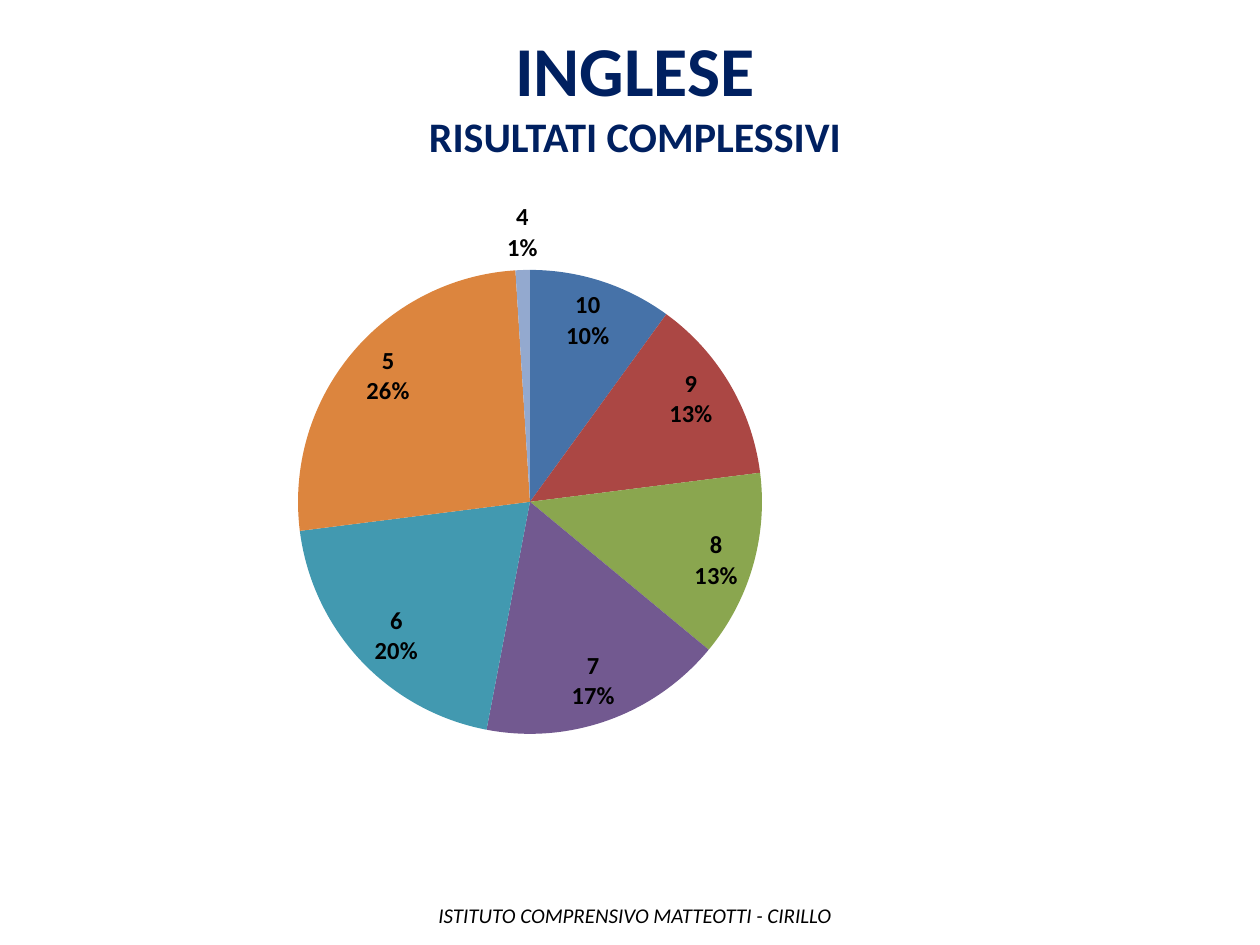
from lxml import etree
from pptx import Presentation
from pptx.chart.data import CategoryChartData
from pptx.dml.color import RGBColor
from pptx.enum.chart import XL_CHART_TYPE, XL_LABEL_POSITION
from pptx.enum.text import PP_ALIGN
from pptx.oxml.ns import qn
from pptx.util import Pt

PIE = XL_CHART_TYPE.PIE
BEST_FIT = XL_LABEL_POSITION.BEST_FIT
LEFT, CENTER = PP_ALIGN.LEFT, PP_ALIGN.CENTER

# Content
TITLE = [("INGLESE", 40), ("RISULTATI COMPLESSIVI", 24)]
FOOTER = [("ISTITUTO COMPRENSIVO MATTEOTTI - CIRILLO", 12)]
GRADES = [  # grade, percent, slice colour
    ("10", 10, "blue"),
    ("9", 13, "red"),
    ("8", 13, "green"),
    ("7", 17, "purple"),
    ("6", 20, "teal"),
    ("5", 26, "orange"),
    ("4", 1, "pale"),
]
COLORS = {
    "navy": "002060", "black": "000000",
    "blue": "4672A8", "red": "AB4744", "green": "8AA64F", "purple": "725990",
    "teal": "4299B0", "orange": "DC853E", "pale": "93A9CF",
}
FONT = "Calibri"

# Geometry in px: left, top, width, height
PX = 914400 // 126
SLIDE = (1260, 945)
TITLE_BOX = (174, 20, 922, 149)
FOOTER_BOX = (426, 896, 430, 38)
CHART_BOX = (54, 185, 995, 568)
PIE_BOX = (298, 270, 464, 464)


def emu(box):
    return [v * PX for v in box]


def rgb(name):
    return RGBColor.from_string(COLORS[name])


def set_font(font, size, color, bold=False, italic=False):
    font.name, font.size = FONT, Pt(size)
    font.bold, font.italic = bold, italic
    font.color.rgb = rgb(color)


def add_text(s, lines, box, color, align=LEFT, wrap=True, **style):
    tf = s.shapes.add_textbox(*emu(box)).text_frame
    tf.word_wrap = wrap
    for i, (text, size) in enumerate(lines):
        p = tf.add_paragraph() if i else tf.paragraphs[0]
        p.alignment = align
        r = p.add_run()
        r.text = text
        set_font(r.font, size, color, **style)


def place_plot(chart, box, frame):
    """Fix the inner plot area at box, as fractions of the chart frame."""
    area = chart._chartSpace.chart.plotArea
    for old in area.findall(qn("c:layout")):
        area.remove(old)
    layout = etree.Element(qn("c:layout"))
    manual = etree.SubElement(layout, qn("c:manualLayout"))
    x, y = (box[0] - frame[0]) / frame[2], (box[1] - frame[1]) / frame[3]
    w, h = box[2] / frame[2], box[3] / frame[3]
    settings = [("layoutTarget", "inner"), ("xMode", "edge"), ("yMode", "edge"),
                ("x", x), ("y", y), ("w", w), ("h", h)]
    for tag, val in settings:
        etree.SubElement(manual, qn(f"c:{tag}")).set("val", str(val))
    area.insert(0, layout)


def add_pie(s):
    data = CategoryChartData()
    data.categories = [grade for grade, _, _ in GRADES]
    data.add_series("Series 1", [percent for _, percent, _ in GRADES])
    chart = s.shapes.add_chart(PIE, *emu(CHART_BOX), data).chart
    chart.has_title = chart.has_legend = False
    set_font(chart.font, 18, "black")
    chart.plots[0].vary_by_categories = True
    place_plot(chart, PIE_BOX, CHART_BOX)

    # Slices
    series = chart.plots[0].series[0]
    for i, (_, _, color) in enumerate(GRADES):
        fill = series.points[i].format.fill
        fill.solid()
        fill.fore_color.rgb = rgb(color)

    # Labels: grade above percentage
    labels = series.data_labels
    labels.show_value = False
    labels.show_category_name = labels.show_percentage = True
    labels.position = BEST_FIT
    set_font(labels.font, 14, "black", bold=True)
    separator = etree.Element(qn("c:separator"))
    separator.text = "\n"
    labels._element.find(qn("c:showBubbleSize")).addnext(separator)


def main():
    prs = Presentation()
    prs.slide_width, prs.slide_height = emu(SLIDE)
    s = prs.slides.add_slide(prs.slide_layouts[6])
    add_text(s, TITLE, TITLE_BOX, "navy", align=CENTER, bold=True)
    add_text(s, FOOTER, FOOTER_BOX, "black", wrap=False, italic=True)
    add_pie(s)
    prs.save("out.pptx")


if __name__ == "__main__":
    main()
